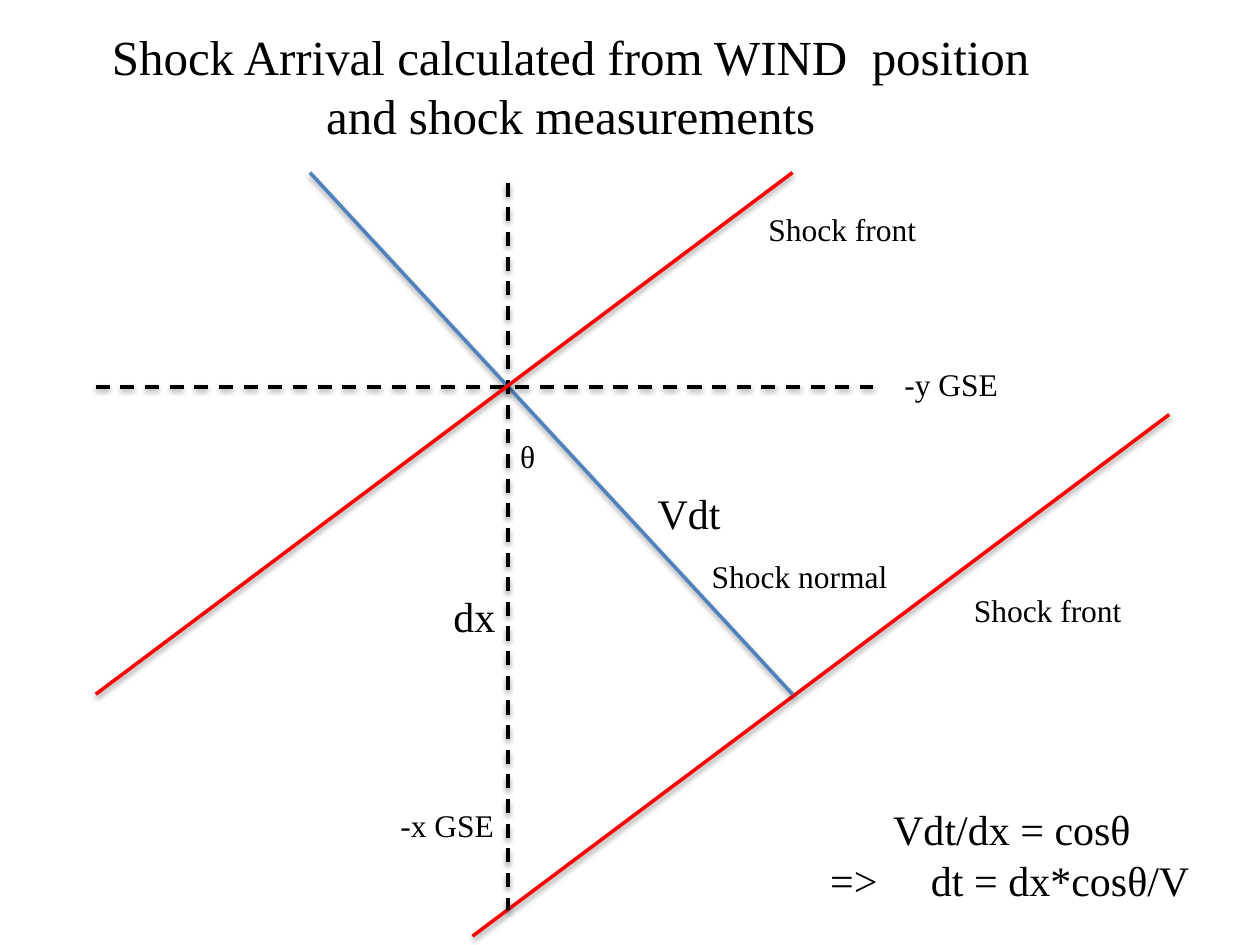
from dataclasses import dataclass

from lxml.etree import SubElement as Sub
from pptx import Presentation
from pptx.dml.color import RGBColor as Rgb
from pptx.enum.dml import MSO_LINE as Dash
from pptx.enum.shapes import MSO_CONNECTOR as Conn
from pptx.enum.text import MSO_AUTO_SIZE as Fit, PP_ALIGN as Align
from pptx.oxml.ns import qn
from pptx.util import Inches, Pt


@dataclass(frozen=True)
class Theme:
    font: str = "Times New Roman"
    black: str = "000000"
    red: str = "FF0000"
    blue: str = "4F81BD"
    title: int = 28
    large: int = 24
    small: int = 18
    stroke: int = 2


THEME = Theme()


@dataclass
class Line:
    start: tuple[float, float]
    end: tuple[float, float]
    color: str
    dashed: bool = False


@dataclass
class Label:
    text: str
    left: float
    top: float
    width: float
    height: float = 0.4
    size: int = THEME.small
    align: Align = Align.LEFT


def add_shadow(conn) -> None:
    """Soft black shadow falling straight down."""
    props = conn._element.spPr
    shadow = Sub(Sub(props, qn("a:effectLst")), qn("a:outerShdw"),
                 blurRad=str(Pt(3.1)), dist=str(Pt(1.6)),
                 dir=str(90 * 60000), rotWithShape="0")
    color = Sub(shadow, qn("a:srgbClr"), val=THEME.black)
    Sub(color, qn("a:alpha"), val="38000")


def draw_line(slide, item: Line) -> None:
    ends = [Inches(v) for v in (*item.start, *item.end)]
    conn = slide.shapes.add_connector(Conn.STRAIGHT, *ends)
    conn.line.color.rgb = Rgb.from_string(item.color)
    conn.line.width = Pt(THEME.stroke)
    if item.dashed:
        conn.line.dash_style = Dash.DASH
    add_shadow(conn)


def draw_label(slide, item: Label):
    spot = [Inches(v) for v in (item.left, item.top, item.width, item.height)]
    frame = slide.shapes.add_textbox(*spot).text_frame
    frame.word_wrap = False
    frame.auto_size = Fit.SHAPE_TO_FIT_TEXT
    frame.text = item.text
    for para in frame.paragraphs:
        para.alignment = item.align
        para.font.name = THEME.font
        para.font.size = Pt(item.size)
        para.font.color.rgb = Rgb.from_string(THEME.black)
    return frame


def indent(para, left: float, tab: float) -> None:
    """Left margin and one tab stop, in inches."""
    props = para._p.get_or_add_pPr()
    props.set("marL", str(Inches(left)))
    tabs = props.makeelement(qn("a:tabLst"), {})
    Sub(tabs, qn("a:tab"), pos=str(Inches(tab)), algn="l")
    props.insert_element_before(tabs, "a:defRPr", "a:extLst")


# The two fronts are parallel; the normal runs from one to the other
LINES = [
    Line((3.75, 7.43), (9.28, 3.29), THEME.red),
    Line((6.29, 5.51), (2.46, 1.37), THEME.blue),
    Line((0.76, 3.07), (6.93, 3.07), THEME.black, True),
    Line((4.03, 1.45), (4.03, 7.22), THEME.black, True),
    Line((0.76, 5.51), (6.29, 1.37), THEME.red),
]

TITLE = Label("Shock Arrival calculated from WIND  position\n"
              "and shock measurements",
              0.6, 0.16, 7.86, 1.04, THEME.title, Align.CENTER)

LABELS = [
    Label("Vdt", 5.12, 3.82, 0.71, 0.5, THEME.large),
    Label("dx", 3.5, 4.64, 0.54, 0.5, THEME.large),
    Label("-y GSE", 7.08, 2.85, 0.96),
    Label("-x GSE", 3.08, 6.35, 0.96),
    Label("Shock front", 6, 1.62, 1.39),
    Label("Shock front", 7.63, 4.64, 1.39),
    Label("Shock normal", 5.55, 4.37, 1.61),
    Label("θ", 4.03, 3.42, 0.32),
]

RESULT = Label("Vdt/dx = cosθ\n=>\tdt = dx*cosθ/V",
               6.49, 6.33, 3.18, 0.91, THEME.large)


def main() -> None:
    deck = Presentation()
    deck.slide_width, deck.slide_height = Inches(10), Inches(7.5)
    slide = deck.slides.add_slide(deck.slide_layouts[6])

    # Title, then the geometry
    draw_label(slide, TITLE)
    for item in LINES:
        draw_line(slide, item)

    # Names of lines, axes and lengths
    for item in LABELS:
        draw_label(slide, item)

    # Resulting equations
    first, second = draw_label(slide, RESULT).paragraphs
    indent(first, 0.5, 0.8)
    indent(second, 0, 0.8)

    deck.save("out.pptx")


if __name__ == "__main__":
    main()
